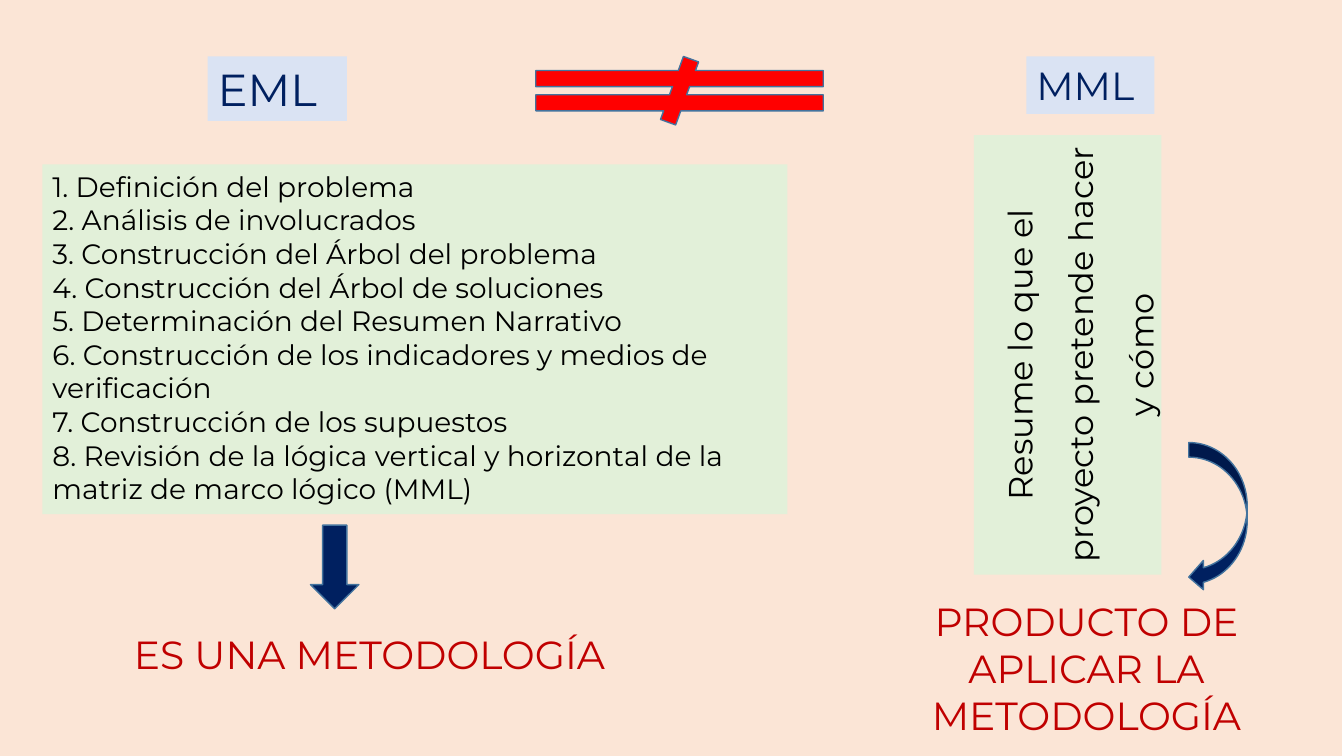
"""Build the slide that compares the EML method with the MML matrix."""
import pptx
import pptx.util
import pptx.dml.color
import pptx.enum.shapes
import pptx.enum.text

Inches = pptx.util.Inches
RGBColor = pptx.dml.color.RGBColor
Kind = pptx.enum.shapes.MSO_SHAPE
Align = pptx.enum.text.PP_ALIGN

PEACH = RGBColor(0xFB, 0xE5, 0xD6)
SKY = RGBColor(0xDA, 0xE3, 0xF3)
MINT = RGBColor(0xE2, 0xF0, 0xD9)
NAVY = RGBColor(0x00, 0x20, 0x60)
STEEL = RGBColor(0x43, 0x73, 0x9E)
RED = RGBColor(0xFF, 0x00, 0x00)
WINE = RGBColor(0xC0, 0x00, 0x00)
BLACK = RGBColor(0x00, 0x00, 0x00)

STEPS = [
    "1. Definición del problema",
    "2. Análisis de involucrados",
    "3. Construcción del Árbol del problema",
    "4. Construcción del Árbol de soluciones",
    "5. Determinación del Resumen Narrativo",
    "6. Construcción de los indicadores y medios de verificación",
    "7. Construcción de los supuestos",
    "8. Revisión de la lógica vertical y horizontal de la matriz de marco lógico (MML)",
]

deck = pptx.Presentation()
deck.slide_width = Inches(13.33)
deck.slide_height = Inches(7.5)
slide = deck.slides.add_slide(deck.slide_layouts[6])


def draw(kind, box, fill, edge=None):
    shape = slide.shapes.add_shape(kind, *map(Inches, box))
    shape.shadow.inherit = False
    shape.fill.solid()
    shape.fill.fore_color.rgb = fill
    if edge is None:
        shape.line.fill.background()
    else:
        shape.line.color.rgb = edge
        shape.line.width = pptx.util.Pt(1)
    return shape


def write(shape, lines, size, color, align=Align.LEFT, space=None):
    frame = shape.text_frame
    frame.word_wrap = True
    frame.auto_size = pptx.enum.text.MSO_AUTO_SIZE.SHAPE_TO_FIT_TEXT
    frame.vertical_anchor = pptx.enum.text.MSO_ANCHOR.TOP
    for index, line in enumerate(lines):
        para = frame.add_paragraph() if index else frame.paragraphs[0]
        para.alignment = align
        para.line_spacing = space
        run = para.add_run()
        run.text = line
        run.font.name = "Montserrat"
        run.font.size = pptx.util.Pt(size)
        run.font.color.rgb = color


draw(Kind.RECTANGLE, (0, 0, 13.31, 7.67), PEACH)

for label, box, size in [
    ("EML", (2.06, 0.56, 1.38, 0.64), 32),
    ("MML", (10.18, 0.56, 1.27, 0.57), 28),
]:
    write(draw(Kind.RECTANGLE, box, SKY), [label], size, NAVY)

write(draw(Kind.RECTANGLE, (0.42, 1.63, 7.39, 3.47), MINT), STEPS, 20, BLACK)

brief = draw(Kind.RECTANGLE, (8.41, 2.59, 4.36, 1.86), MINT)
brief.rotation = 270
write(brief, ["Resume lo que el proyecto pretende hacer y cómo"], 24, BLACK, Align.CENTER, 1.5)

for label, box, align in [
    ("ES UNA METODOLOGÍA", (1.23, 6.2, 5.41, 0.57), Align.LEFT),
    ("PRODUCTO DE APLICAR LA METODOLOGÍA", (8.94, 5.88, 3.67, 1.51), Align.CENTER),
]:
    write(slide.shapes.add_textbox(*map(Inches, box)), [label], 28, WINE, align)

for kind, box, fill in [
    (Kind.MATH_NOT_EQUAL, (4.8, 0.56, 3.88, 0.68), RED),
    (Kind.DOWN_ARROW, (3.08, 5.21, 0.48, 0.83), NAVY),
    (Kind.CURVED_LEFT_ARROW, (11.79, 4.39, 0.58, 1.48), NAVY),
]:
    draw(kind, box, fill, STEEL)

deck.save("out.pptx")
